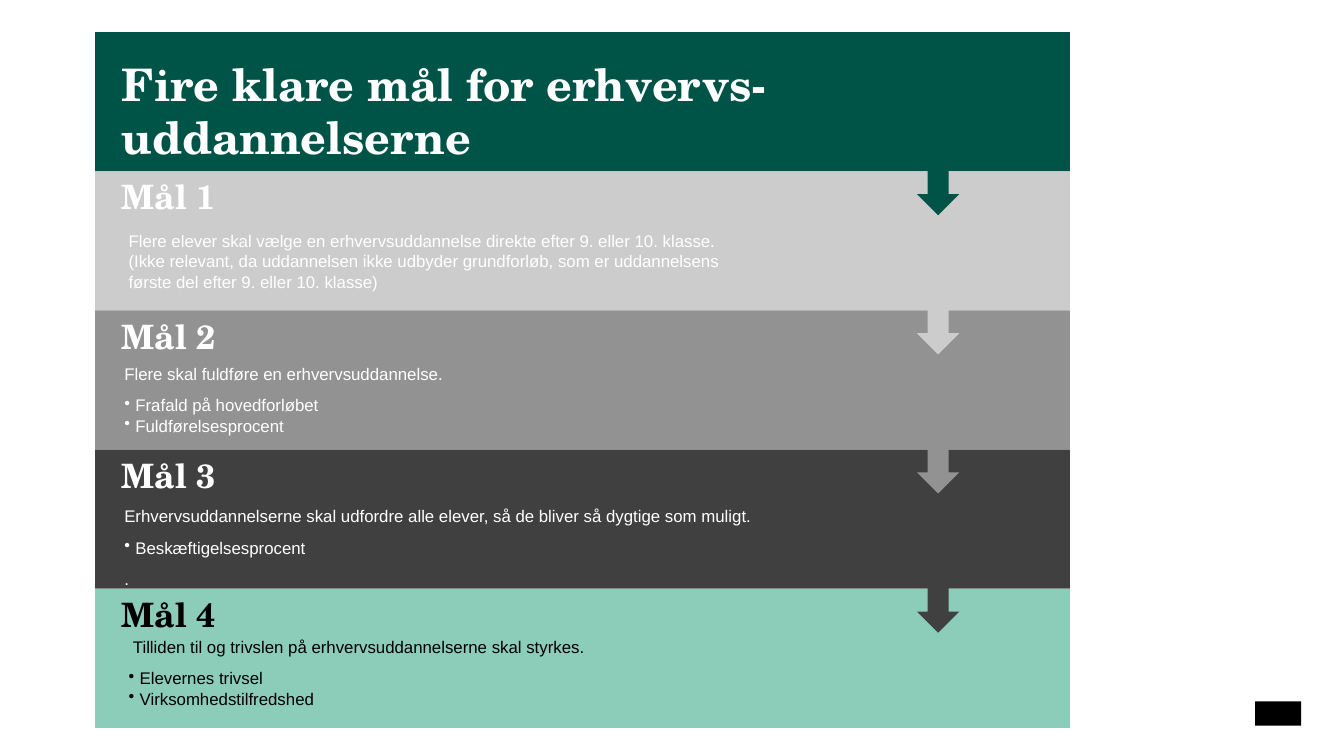
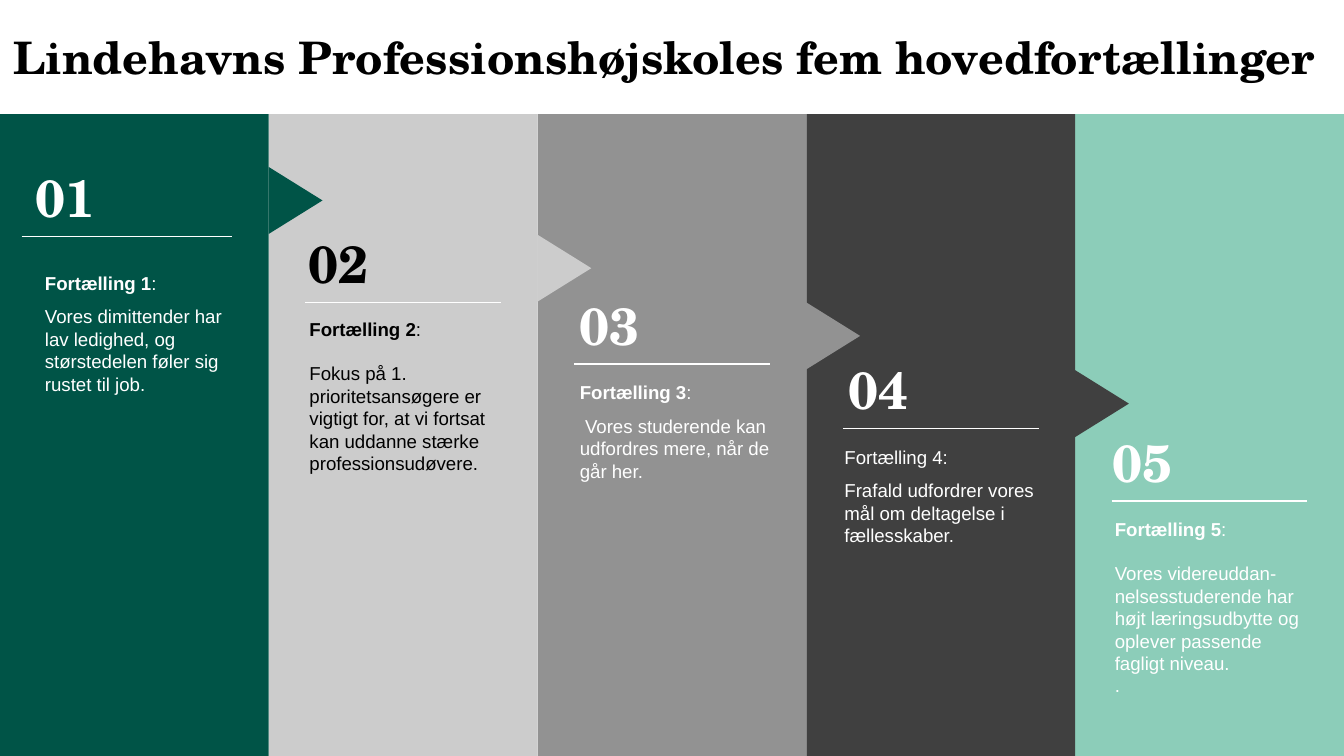
from dataclasses import dataclass

from lxml.etree import SubElement
from pptx import Presentation
from pptx.dml.color import RGBColor
from pptx.enum.shapes import MSO_CONNECTOR, MSO_SHAPE
from pptx.enum.text import MSO_AUTO_SIZE, PP_ALIGN
from pptx.oxml.ns import qn
from pptx.shapes.autoshape import Shape
from pptx.slide import Slide
from pptx.util import Cm, Pt

WHITE = "FFFFFF"
BLACK = "000000"
GREEN = "005447"
BAND_COLORS = [GREEN, "CCCCCC", "929292", "404040", "8CCDB9"]
HEADING_FONT = "TeX Gyre Schola"
BODY_FONT = "Arial"
TITLE_SIZE = 24

SLIDE_WIDTH = 25.4
SLIDE_HEIGHT = 14.29

BAND_LEFT = 1.8
BAND_TOP = 0.61
BAND_WIDTH = 18.42
BAND_STEP = 2.63

COLUMN_TOP = 2.16
COLUMN_WIDTH = 5.08


@dataclass(frozen=True)
class Box:
    left: float
    top: float
    width: float
    height: float


@dataclass(frozen=True)
class TextRun:
    text: str
    bold: bool = False


@dataclass(frozen=True)
class TextParagraph:
    runs: tuple[TextRun, ...]
    space_after: float = 0
    bullet: bool = False


@dataclass(frozen=True)
class TextStyle:
    font: str
    size: float
    color: str
    align: PP_ALIGN = PP_ALIGN.LEFT


@dataclass(frozen=True)
class Goal:
    heading: str
    text_color: str
    body: Box
    paragraphs: tuple[TextParagraph, ...]


@dataclass(frozen=True)
class Story:
    number: str
    text_color: str
    rule_start: float
    rule_top: float
    number_left: float
    body: Box
    paragraphs: tuple[TextParagraph, ...]


def color(value: str) -> RGBColor:
    return RGBColor.from_string(value)


def plain(text: str, space_after: float = 0, bullet: bool = False) -> TextParagraph:
    return TextParagraph((TextRun(text),), space_after, bullet)


def bold(text: str) -> TextParagraph:
    return TextParagraph((TextRun(text, True),))


def story_heading(text: str, space_after: float = 6) -> TextParagraph:
    return TextParagraph((TextRun(text, True), TextRun(":")), space_after)


def add_filled_shape(slide: Slide, kind: MSO_SHAPE, box: Box, fill: str) -> Shape:
    shape = slide.shapes.add_shape(
        kind, Cm(box.left), Cm(box.top), Cm(box.width), Cm(box.height)
    )
    shape.shadow.inherit = False
    shape.fill.solid()
    shape.fill.fore_color.rgb = color(fill)
    shape.line.fill.background()
    return shape


def add_text(
    slide: Slide,
    box: Box,
    style: TextStyle,
    paragraphs: tuple[TextParagraph, ...],
    inset: float = 0.19,
) -> None:
    shape = slide.shapes.add_textbox(
        Cm(box.left), Cm(box.top), Cm(box.width), Cm(box.height)
    )
    frame = shape.text_frame
    frame.word_wrap = True
    frame.auto_size = MSO_AUTO_SIZE.SHAPE_TO_FIT_TEXT
    frame.margin_left = frame.margin_right = Cm(inset)
    frame.margin_top = frame.margin_bottom = Cm(inset / 2)
    for index, content in enumerate(paragraphs):
        paragraph = frame.add_paragraph() if index else frame.paragraphs[0]
        paragraph.alignment = style.align
        paragraph.space_after = Pt(content.space_after)
        if content.bullet:
            properties = paragraph._p.get_or_add_pPr()
            properties.set("marL", str(Cm(0.21)))
            properties.set("indent", str(Cm(-0.21)))
            SubElement(properties, qn("a:buChar")).set("char", "•")
        for part in content.runs:
            run = paragraph.add_run()
            run.text = part.text
            run.font.name = style.font
            run.font.size = Pt(style.size)
            run.font.bold = part.bold
            run.font.color.rgb = color(style.color)


def add_rule(slide: Slide, start: float, end: float, top: float) -> None:
    connector = slide.shapes.add_connector(
        MSO_CONNECTOR.STRAIGHT, Cm(start), Cm(top), Cm(end), Cm(top)
    )
    connector.line.color.rgb = color(WHITE)
    connector.line.width = Pt(0.75)
    SubElement(connector._element.spPr, qn("a:effectLst"))


GOALS = [
    Goal("Mål 1", WHITE, Box(2.24, 4.27, 11.76, 1.35), (
        plain(
            "Flere elever skal vælge en erhvervsuddannelse direkte efter 9. eller "
            "10. klasse. (Ikke relevant, da uddannelsen ikke udbyder grundforløb, "
            "som er uddannelsens første del efter 9. eller 10. klasse)", 6),
    )),
    Goal("Mål 2", WHITE, Box(2.16, 6.78, 9.04, 1.55), (
        plain("Flere skal fuldføre en erhvervsuddannelse.", 6),
        plain("Frafald på hovedforløbet", bullet=True),
        plain("Fuldførelsesprocent", 6, bullet=True),
    )),
    Goal("Mål 3", WHITE, Box(2.16, 9.47, 12.37, 1.78), (
        plain(
            "Erhvervsuddannelserne skal udfordre alle elever, "
            "så de bliver så dygtige som muligt.", 6),
        plain("Beskæftigelsesprocent", 6, bullet=True),
        plain("."),
    )),
    Goal("Mål 4", BLACK, Box(2.24, 11.94, 9.04, 1.55), (
        plain(" Tilliden til og trivslen på erhvervsuddannelserne skal styrkes.", 6),
        plain("Elevernes trivsel", bullet=True),
        plain("Virksomhedstilfredshed", 6, bullet=True),
    )),
]

STORIES = [
    Story("01", WHITE, 0.41, 4.47, 0.38, Box(0.66, 5.04, 3.99, 2.55), (
        story_heading("Fortælling 1"),
        plain(
            "Vores dimittender har lav ledighed, og størstedelen "
            "føler sig rustet til job.", 6),
    )),
    Story("02", BLACK, 5.77, 5.72, 5.54, Box(5.66, 5.92, 3.99, 3.18), (
        story_heading("Fortælling 2", 11.5),
        plain(
            "Fokus på 1. prioritetsansøgere er vigtigt for, at vi fortsat "
            "kan uddanne stærke professionsudøvere."),
    )),
    Story("03", WHITE, 10.85, 6.88, 10.67, Box(10.77, 7.11, 3.99, 2.11), (
        story_heading("Fortælling 3"),
        plain(" Vores studerende kan udfordres mere, når de går her.", 6),
    )),
    Story("04", WHITE, 15.93, 8.1, 15.75, Box(15.77, 8.33, 3.99, 2.11), (
        plain("Fortælling 4:", 6),
        plain("Frafald udfordrer vores mål om deltagelse i fællesskaber.", 6),
    )),
    Story("05", WHITE, 21.01, 9.47, 20.75, Box(20.88, 9.7, 3.99, 3.61), (
        story_heading("Fortælling 5", 11.5),
        plain(
            "Vores videreuddan-nelsesstuderende har højt læringsudbytte "
            "og oplever passende fagligt niveau."),
        plain("."),
    )),
]


def build_goals_slide(slide: Slide) -> None:
    for index, fill in enumerate(BAND_COLORS):
        top = BAND_TOP + index * BAND_STEP
        band = Box(BAND_LEFT, top, BAND_WIDTH, BAND_STEP)
        add_filled_shape(slide, MSO_SHAPE.RECTANGLE, band, fill)
        if index:
            arrow = Box(17.33, top - 0.06, 0.8, 0.89)
            add_filled_shape(
                slide, MSO_SHAPE.DOWN_ARROW, arrow, BAND_COLORS[index - 1]
            )
    add_text(
        slide,
        Box(2.11, 0.97, 17.48, 2.24),
        TextStyle(HEADING_FONT, TITLE_SIZE, WHITE),
        (bold("Fire klare mål for erhvervs-uddannelserne"),),
    )
    for index, goal in enumerate(GOALS, start=1):
        add_text(
            slide,
            Box(2.11, BAND_TOP + index * BAND_STEP, 6.5, 0.97),
            TextStyle(HEADING_FONT, 18, goal.text_color),
            (bold(goal.heading),),
        )
        add_text(
            slide,
            goal.body,
            TextStyle(BODY_FONT, 9, goal.text_color),
            goal.paragraphs,
        )
    emblem = Box(23.72, 13.26, 0.87, 0.46)
    add_filled_shape(slide, MSO_SHAPE.RECTANGLE, emblem, BLACK)


def build_stories_slide(slide: Slide) -> None:
    for index, story in reversed(list(enumerate(STORIES))):
        left = index * COLUMN_WIDTH
        column = Box(left, COLUMN_TOP, COLUMN_WIDTH, SLIDE_HEIGHT - COLUMN_TOP)
        add_filled_shape(slide, MSO_SHAPE.RECTANGLE, column, BAND_COLORS[index])
        if index < len(STORIES) - 1:
            pointer = Box(left + 4.95, 3.28 + index * 1.28, 1.27, 1.02)
            triangle = add_filled_shape(
                slide, MSO_SHAPE.ISOSCELES_TRIANGLE, pointer, BAND_COLORS[index]
            )
            triangle.rotation = 90
        add_rule(slide, story.rule_start, left + 4.39, story.rule_top)
        add_text(
            slide,
            Box(story.number_left, story.rule_top - 1.44, 1.7, 1.4),
            TextStyle(HEADING_FONT, 28, story.text_color, PP_ALIGN.CENTER),
            (bold(story.number),),
        )
        add_text(
            slide,
            story.body,
            TextStyle(BODY_FONT, 10, story.text_color),
            story.paragraphs,
        )
    add_text(
        slide,
        Box(0, 0.43, SLIDE_WIDTH, 1.27),
        TextStyle(HEADING_FONT, TITLE_SIZE, BLACK),
        (bold("Lindehavns Professionshøjskoles fem hovedfortællinger"),),
        inset=0.25,
    )


def main() -> None:
    presentation = Presentation()
    presentation.slide_width = Cm(SLIDE_WIDTH)
    presentation.slide_height = Cm(SLIDE_HEIGHT)
    blank_layout = presentation.slide_layouts[6]
    for build in (build_goals_slide, build_stories_slide):
        build(presentation.slides.add_slide(blank_layout))
    presentation.save("out.pptx")


if __name__ == "__main__":
    main()
